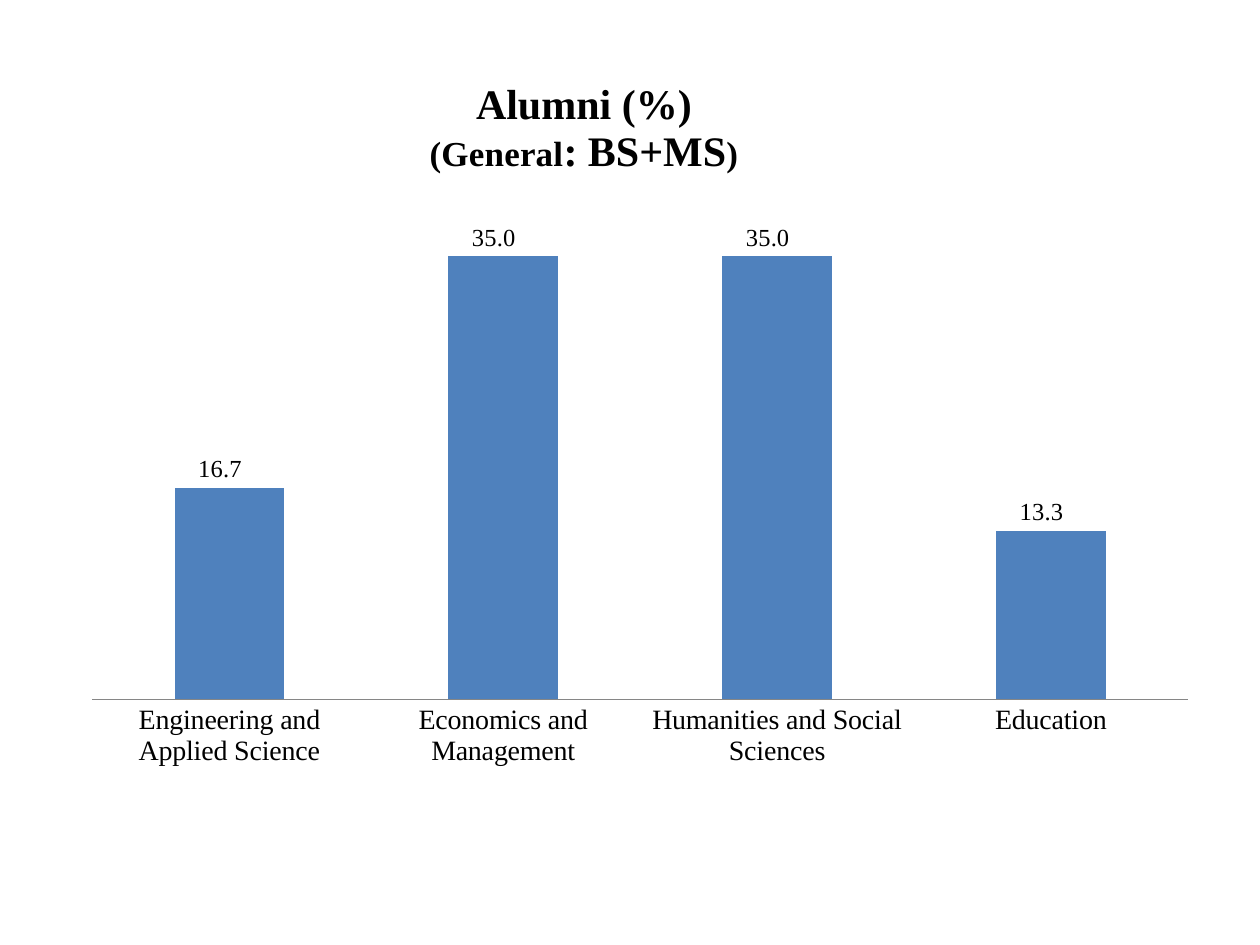
from lxml import etree
from pptx import Presentation
from pptx.chart import data as chart_data
from pptx.dml.color import RGBColor
from pptx.enum import chart as ch
from pptx.oxml import ns
from pptx.util import Cm, Pt

BLACK = RGBColor(0x00, 0x00, 0x00)
BLUE = RGBColor(0x4F, 0x81, 0xBD)
GREY = RGBColor(0x86, 0x86, 0x86)
SERIF = "Times New Roman"
PERCENT_FORMAT = "_-* #,##0.0_р_._-;\\-* #,##0.0_р_._-"

ALUMNI = {
    "Engineering and Applied Science": 16.7,
    "Economics and Management": 35,
    "Humanities and Social Sciences": 35,
    "Education": 13.3,
}
HEADING = [
    [("Alumni (%)", 24)],
    [("(General", 20), (": BS+MS", 24), (")", 20)],
]


def style_font(font, size, name=SERIF, bold=False):
    font.name = name
    font.size = Pt(size)
    font.bold = bold
    font.color.rgb = BLACK


def place(parent, index, **settings):
    for old in parent.findall(ns.qn("c:layout")):
        parent.remove(old)
    layout = etree.Element(ns.qn("c:layout"))
    manual = etree.SubElement(layout, ns.qn("c:manualLayout"))
    for tag, value in settings.items():
        etree.SubElement(manual, ns.qn(f"c:{tag}")).set("val", str(value))
    parent.insert(index, layout)


def add_heading(chart):
    chart.has_title = True
    heading = chart.chart_title
    frame = heading.text_frame
    for number, pieces in enumerate(HEADING):
        line = frame.add_paragraph() if number else frame.paragraphs[0]
        for words, size in pieces:
            run = line.add_run()
            run.text = words
            style_font(run.font, size, bold=True)
    heading.include_in_layout = False
    place(heading._element, 1, xMode="edge", yMode="edge", x=0.32, y=0.02)


def style_axes(chart):
    subjects = chart.category_axis
    subjects.major_tick_mark = ch.XL_TICK_MARK.NONE
    subjects.format.line.color.rgb = GREY
    style_font(subjects.tick_labels.font, 16)

    percent = chart.value_axis
    percent.minimum_scale, percent.maximum_scale = 0, 40
    percent.has_major_gridlines = False
    percent.visible = False


def style_columns(plot):
    plot.gap_width = 150
    plot.overlap = -25
    plot.vary_by_categories = False
    columns = plot.series[0]
    columns.format.fill.solid()
    columns.format.fill.fore_color.rgb = BLUE

    labels = columns.data_labels
    labels.show_value = True
    labels.position = ch.XL_LABEL_POSITION.OUTSIDE_END
    labels.number_format = PERCENT_FORMAT
    labels.number_format_is_linked = False
    style_font(labels.font, 14)


def add_alumni_chart(slide):
    shares = chart_data.CategoryChartData(number_format="0.0")
    shares.categories = list(ALUMNI)
    shares.add_series("Series 1", list(ALUMNI.values()))
    chart = slide.shapes.add_chart(
        ch.XL_CHART_TYPE.COLUMN_CLUSTERED,
        Cm(1.27), Cm(1.19), Cm(22.86), Cm(16.28), shares,
    ).chart
    chart.has_legend = False
    style_font(chart.font, 10, "Calibri")
    add_heading(chart)
    style_axes(chart)
    style_columns(chart.plots[0])
    plot_area = chart._chartSpace.find(".//" + ns.qn("c:plotArea"))
    place(plot_area, 0, layoutTarget="inner", xMode="edge", yMode="edge",
          x=0.026, y=0.166, w=0.966, h=0.627)


def main():
    deck = Presentation()
    deck.slide_width, deck.slide_height = Cm(25.4), Cm(19.05)
    slide = deck.slides.add_slide(deck.slide_layouts.get_by_name("Blank"))
    add_alumni_chart(slide)
    deck.save("out.pptx")


if __name__ == "__main__":
    main()
